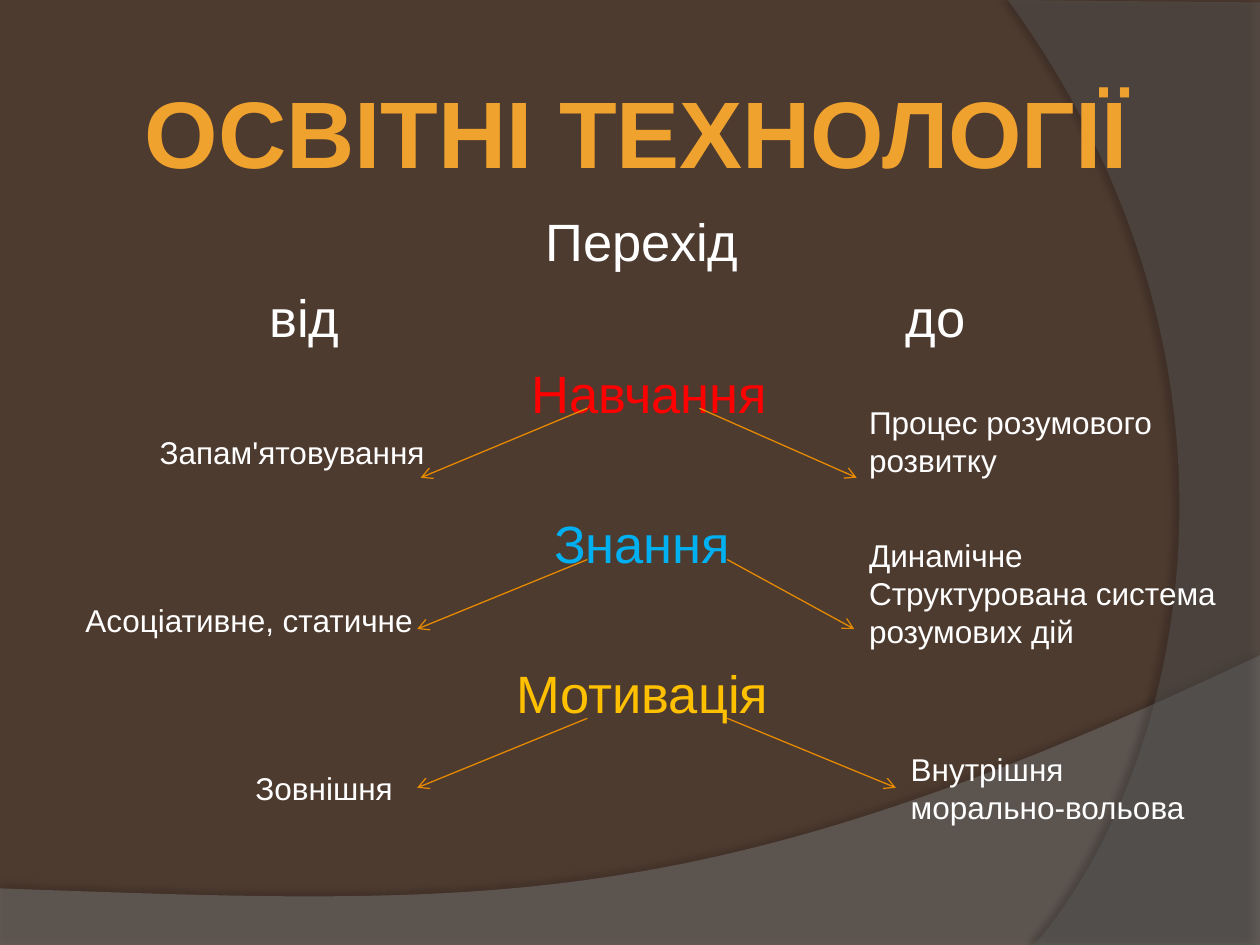
"""Build the slide on the shift that educational technologies bring."""
from dataclasses import dataclass

from lxml.etree import SubElement
from pptx import Presentation
from pptx.dml.color import RGBColor as Rgb
from pptx.enum.shapes import MSO_CONNECTOR as Conn
from pptx.enum.text import PP_ALIGN as Align
from pptx.oxml.ns import qn
from pptx.util import Cm, Pt


@dataclass(frozen=True)
class Theme:
    font: str = "Arial"
    back: str = "4E3B30"
    white: str = "FFFFFF"
    gold: str = "F0A22E"
    arrow: str = "E58900"
    red: str = "FF0000"
    blue: str = "00B0F0"
    amber: str = "FFC000"
    wave: str = "7F7F7F"
    band: str = "5E5E5E"
    title: int = 54
    head: int = 30
    note: int = 18
    line: float = 0.75


T = Theme()
SIZE = (25.4, 19.05)

CURVES = [
    {"edge": [(0, 17.91), (0, 19.08), (25.4, 19.08), (25.4, 13.21)],
     "bend": [(14.2, 18.52), (9.93, 18.26), (0, 17.91)],
     "fill": T.wave, "alpha": 45, "shade": (35, 3.5, 270)},
    {"edge": [(25.4, 0.05), (25.4, 19.05), (20.85, 19.05)],
     "bend": [(23.75, 15.72), (25.86, 7.62), (20.32, 0)],
     "fill": T.band, "alpha": 40, "shade": (45, 4, 180)},
]

TITLE = ("ОСВІТНІ ТЕХНОЛОГІЇ", (1.47, 1.37, 22.73, 2.57))
BODY = (1.32, 4.09, 23.55, 14.38)
TABS = (3.86, 16.69)
NEAR, FAR = 7.5, 49.5
HEADS = [
    ("Перехід ", T.white, 0),
    ("\tвід\tдо", T.white, NEAR),
    ("Навчання", T.red, NEAR),
    ("Знання ", T.blue, FAR),
    ("Мотивація ", T.amber, FAR),
]

NOTES = [
    (["Запам'ятовування"], (2.97, 8.61, 6.1, 1.02), False),
    (["Процес розумового розвитку"], (17.27, 8, 7.54, 1.8), True),
    (["Асоціативне, статичне"], (1.47, 11.99, 7.19, 1.02), False),
    (["Динамічне", "Структурована система", "розумових дій"],
     (17.27, 10.69, 7.57, 2.57), False),
    (["Зовнішня"], (4.9, 15.37, 3.51, 1.02), False),
    (["Внутрішня", "морально-вольова"], (18.11, 14.99, 6.1, 1.8), False),
]

DROP = 1.4
ARROWS = [
    (8.23, [(11.84, 8.48), (14.1, 17.27)]),
    (11.28, [(11.84, 8.41), (14.66, 17.22)]),
    (14.48, [(11.84, 8.41), (14.66, 18.06)]),
]


def cms(vals):
    """Turn plain numbers into lengths."""
    return [Cm(v) for v in vals]


def bezier(ends, steps=60):
    """Sample a cubic curve after its first point."""
    for i in range(1, steps + 1):
        t = i / steps
        mix = ((1 - t) ** 3, 3 * t * (1 - t) ** 2, 3 * t * t * (1 - t), t ** 3)
        yield tuple(sum(m * p[k] for m, p in zip(mix, ends)) for k in (0, 1))


def add_alpha(color, part):
    """Set the opacity of a colour element in percent."""
    SubElement(color, qn("a:alpha"), val=str(part * 1000))


def add_curve(shapes, edge, bend, fill, alpha, shade):
    """Draw a translucent curved area with a soft shadow."""
    pts = edge[1:] + list(bezier([edge[-1], *bend]))
    pen = shapes.build_freeform(*cms(edge[0]))
    pen.add_line_segments([cms(p) for p in pts], close=True)
    shape = pen.convert_to_shape()
    shape.fill.solid()
    shape.fill.fore_color.rgb = Rgb.from_string(fill)
    shape.line.fill.background()
    shape.shadow.inherit = False
    props = shape.element.spPr
    add_alpha(props.find(qn("a:solidFill"))[0], alpha)
    dark, dist, turn = shade
    cast = SubElement(props.find(qn("a:effectLst")), qn("a:outerShdw"),
                      blurRad=str(Pt(4)), dist=str(Pt(dist)),
                      dir=str(turn * 60000), rotWithShape="0")
    add_alpha(SubElement(cast, qn("a:srgbClr"), val="000000"), dark)


def add_run(para, text, size, color, bold=False):
    """Add one styled run."""
    run = para.add_run()
    run.text = text
    run.font.name, run.font.size, run.font.bold = T.font, Pt(size), bold
    run.font.color.rgb = Rgb.from_string(color)


def add_box(shapes, place, count, wrap=True):
    """Add a text box and return its paragraphs."""
    frame = shapes.add_textbox(*cms(place)).text_frame
    frame.word_wrap = wrap
    for _ in range(count - 1):
        frame.add_paragraph()
    return frame.paragraphs


def add_heads(shapes):
    """Add the middle column of headings."""
    for para, (text, color, gap) in zip(add_box(shapes, BODY, len(HEADS)), HEADS):
        para.space_before = Pt(gap)
        if "\t" in text:
            para.alignment = Align.LEFT
            stops = SubElement(para._p.get_or_add_pPr(), qn("a:tabLst"))
            for pos in TABS:
                SubElement(stops, qn("a:tab"), pos=str(Cm(pos)), algn="l")
        else:
            para.alignment = Align.CENTER
        add_run(para, text, T.head, color)


def add_arrow(shapes, start, end):
    """Add a thin arrow with an open head."""
    link = shapes.add_connector(Conn.STRAIGHT, *cms(start + end))
    link.line.color.rgb = Rgb.from_string(T.arrow)
    link.line.width = Pt(T.line)
    SubElement(link.line._get_or_add_ln(), qn("a:tailEnd"), type="arrow")
    SubElement(link.element.spPr, qn("a:effectLst"))


def main():
    """Build and save the slide."""
    deck = Presentation()
    deck.slide_width, deck.slide_height = cms(SIZE)
    slide = deck.slides.add_slide(deck.slide_layouts[6])
    slide.background.fill.solid()
    slide.background.fill.fore_color.rgb = Rgb.from_string(T.back)
    shapes = slide.shapes
    for curve in CURVES:
        add_curve(shapes, **curve)
    add_heads(shapes)
    text, place = TITLE
    para = add_box(shapes, place, 1)[0]
    para.alignment = Align.CENTER
    add_run(para, text, T.title, T.gold, True)
    for top, pair in ARROWS:
        for left, right in pair:
            add_arrow(shapes, (left, top), (right, top + DROP))
    for lines, place, wrap in NOTES:
        for para, text in zip(add_box(shapes, place, len(lines), wrap), lines):
            add_run(para, text, T.note, T.white)
    deck.save("out.pptx")


if __name__ == "__main__":
    main()
